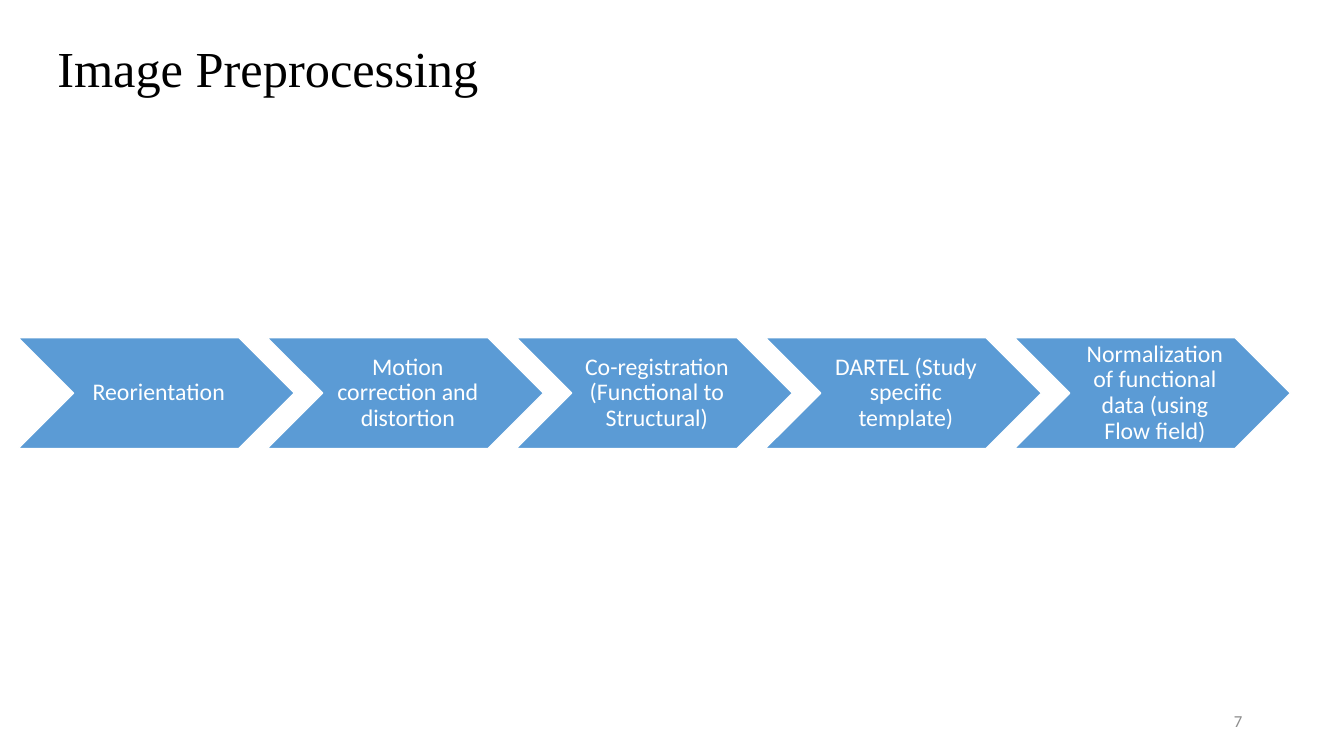
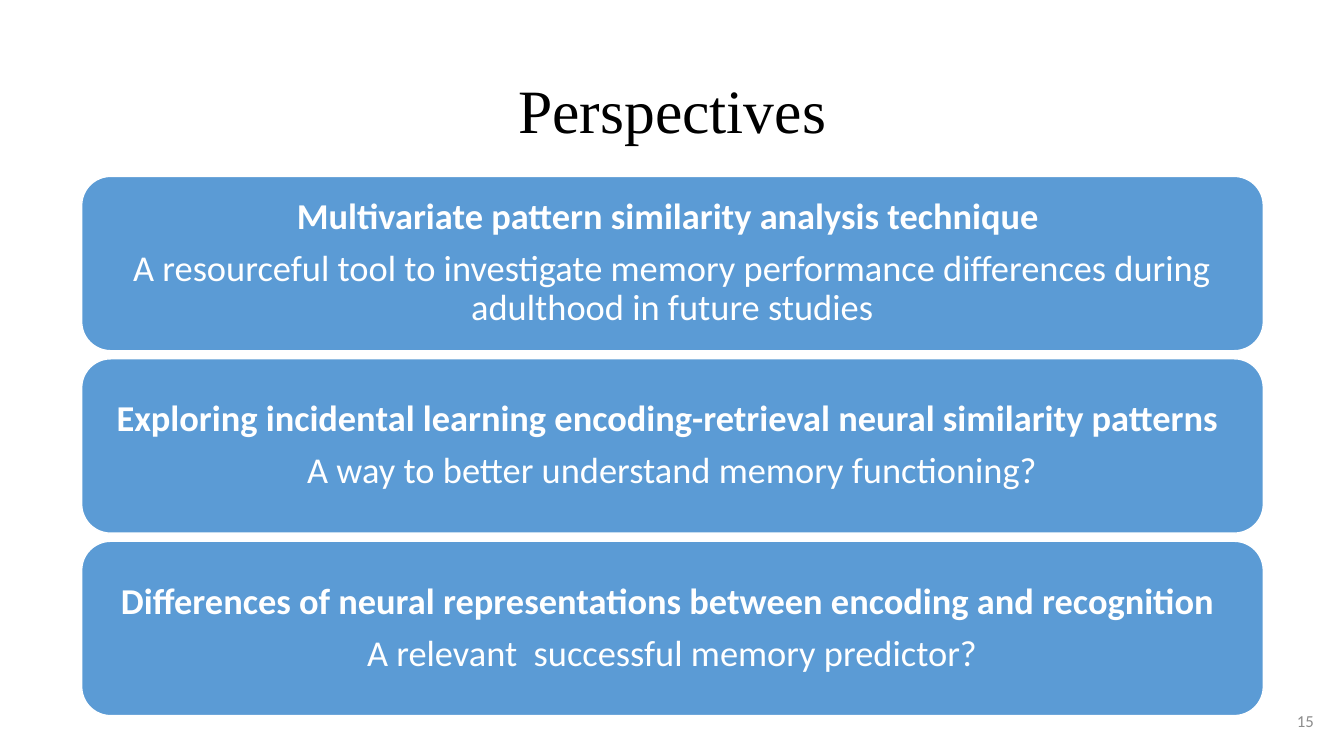
from pptx import Presentation
from pptx import util as u
from pptx.dml.color import RGBColor
from pptx.enum import shapes, text

PX = 9144  # EMU per px, 100 px to the inch
WHITE, BLACK, BLUE, GREY = "FFFFFF", "000000", "5B9BD5", "8C8C8C"
BODY, HEADING = "Calibri", "Times New Roman"
LEFT, CENTER, RIGHT = (text.PP_ALIGN.LEFT, text.PP_ALIGN.CENTER,
                       text.PP_ALIGN.RIGHT)


def color(value):
    return RGBColor.from_string(value)


def add_text(page, area, lines, size, ink, align, font=BODY, preset=None,
             margins=(10, 5, 10, 5), spacing=0.9, bold_first=False):
    """Write lines in a text box, or in a blue preset shape if one is given."""
    area = [u.Emu(length * PX) for length in area]
    if preset is None:
        box = page.shapes.add_textbox(*area)
    else:
        box = page.shapes.add_shape(preset, *area)
        box.shadow.inherit = False
        box.fill.solid()
        box.fill.fore_color.rgb = color(BLUE)
        box.line.color.rgb = color(WHITE)
        box.line.width = u.Pt(1)
    frame = box.text_frame
    frame.word_wrap = True
    frame.vertical_anchor = text.MSO_ANCHOR.MIDDLE
    (frame.margin_left, frame.margin_top,
     frame.margin_right, frame.margin_bottom) = [m * PX for m in margins]
    for index, line in enumerate(lines):
        para = frame.add_paragraph() if index else frame.paragraphs[0]
        para.text = line
        para.alignment = align
        para.line_spacing = spacing
        para.font.name = font
        para.font.size = u.Pt(size)
        para.font.color.rgb = color(ink)
        para.font.bold = bold_first and index == 0
        if index < len(lines) - 1:
            para.space_after = u.Pt(round(size * 0.35))


deck = Presentation()
deck.slide_width, deck.slide_height = u.Inches(13.33), u.Inches(7.5)

# Titles and page numbers
pages = []
for title, title_area, title_size, title_align, number, number_left in [
    ("Image Preprocessing", (47, 37, 1150, 67), 36, LEFT, "7", 942),
    ("Perspectives", (92, 40, 1150, 145), 44, CENTER, "15", 1013),
]:
    page = deck.slides.add_slide(deck.slide_layouts[6])
    add_text(page, title_area, [title], title_size, BLACK, title_align, HEADING)
    add_text(page, (number_left, 695, 300, 40), [number], 12, GREY, RIGHT,
             spacing=1.0)
    pages.append(page)
preprocessing, perspectives = pages

# Chain of preprocessing steps
steps = [
    "Reorientation",
    "Motion correction and distortion",
    "Co-registration (Functional to Structural)",
    "DARTEL (Study specific template)",
    "Normalization of functional data (using Flow field)",
]
for index, step in enumerate(steps):
    add_text(preprocessing, (18 + 247 * index, 335, 274, 110), [step], 17,
             WHITE, CENTER, preset=shapes.MSO_SHAPE.CHEVRON,
             margins=(7, 2, 2, 2))

# Stack of perspectives
outlooks = [
    ("Multivariate pattern similarity analysis technique ",
     "A resourceful tool to investigate memory performance differences "
     "during adulthood in future studies"),
    ("Exploring incidental learning encoding-retrieval neural similarity "
     "patterns ",
     "A way to better understand memory functioning?"),
    ("Differences of neural representations between encoding and "
     "recognition ",
     "A relevant  successful memory predictor?"),
]
for index, outlook in enumerate(outlooks):
    add_text(perspectives, (81, 175 + 181 * index, 1172, 173), outlook, 26,
             WHITE, CENTER, preset=shapes.MSO_SHAPE.ROUNDED_RECTANGLE,
             margins=(11, 11, 11, 11), bold_first=True)

deck.save("out.pptx")
